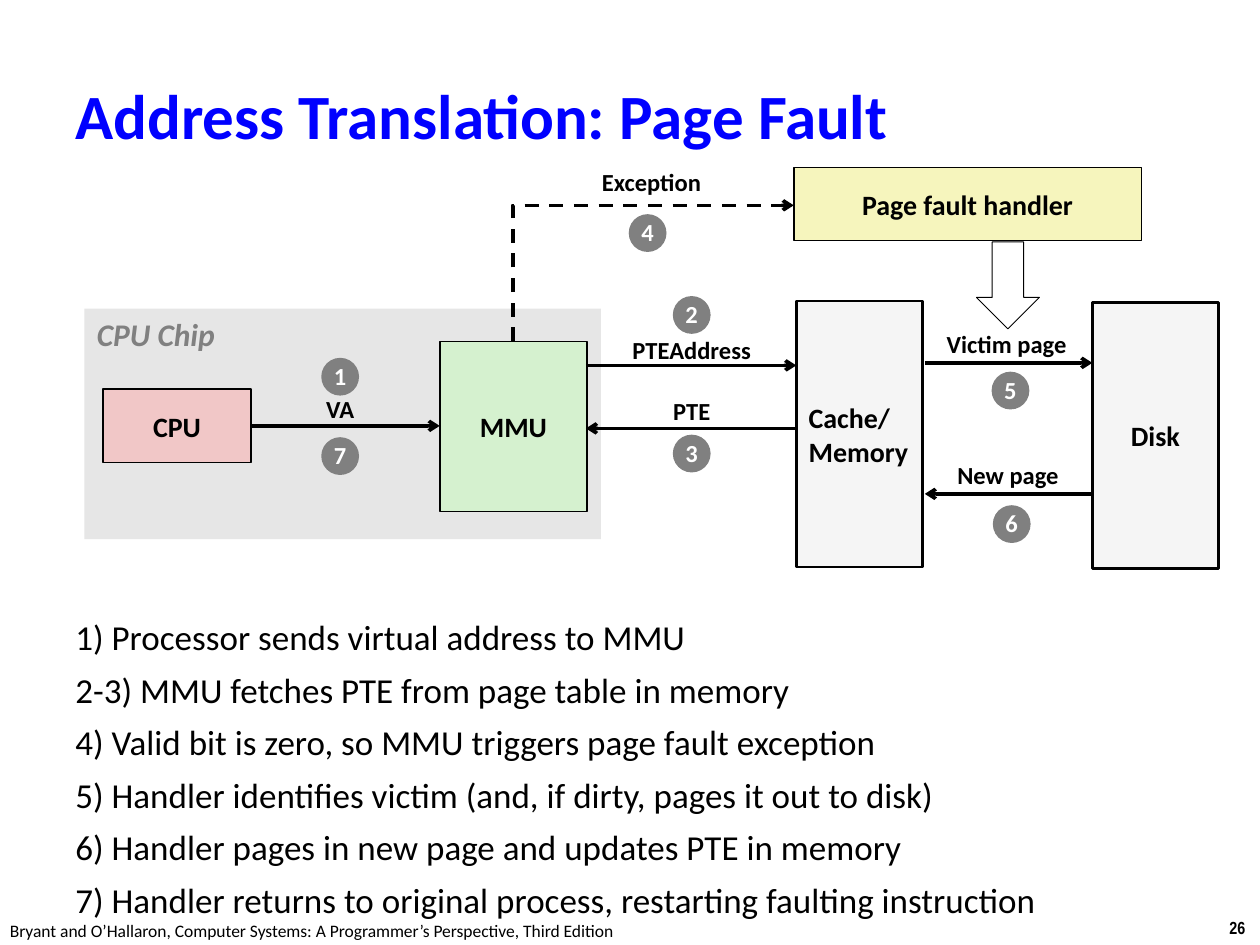
from dataclasses import dataclass

from lxml import etree
from pptx import Presentation
from pptx.dml.color import RGBColor
from pptx.enum import dml, shapes, text
from pptx.oxml import ns
from pptx.util import Inches, Pt


@dataclass(frozen=True)
class Theme:
    font: str = "Calibri"
    number_font: str = "Arial Narrow"
    ink: str = "000000"
    paper: str = "FFFFFF"
    title: str = "0000FF"
    gray: str = "808080"
    chip: str = "E6E6E6"
    cpu: str = "F1C7C7"
    mmu: str = "D5F1CF"
    storage: str = "F5F5F5"
    handler: str = "F6F5BD"
    title_size: int = 36
    step_size: int = 20
    chip_size: int = 18
    node_size: int = 16
    label_size: int = 14
    footer_size: int = 10


THEME = Theme()
SHAPE = shapes.MSO_SHAPE
CENTER = text.PP_ALIGN.CENTER
MIDDLE = text.MSO_ANCHOR.MIDDLE


@dataclass(frozen=True)
class Box:
    left: float
    top: float
    width: float
    height: float

    def inner(self, x, y, width, height):
        return Box(self.left + x, self.top + y, width, height)

    def point(self, x, y):
        return Inches(self.left + x), Inches(self.top + y)

    def lengths(self):
        return [Inches(v) for v in (self.left, self.top, self.width, self.height)]


def write(frame, lines, size, color=THEME.ink, bold=False, italic=False,
          font=THEME.font, align=text.PP_ALIGN.LEFT, anchor=text.MSO_ANCHOR.TOP,
          wrap=False, spacing=None, before=0):
    frame.word_wrap = wrap
    frame.vertical_anchor = anchor
    for index, line in enumerate(lines):
        paragraph = frame.add_paragraph() if index else frame.paragraphs[0]
        paragraph.alignment = align
        paragraph.space_before = Pt(before)
        paragraph.line_spacing = spacing
        run = paragraph.add_run()
        run.text = line
        run.font.name = font
        run.font.size = Pt(size)
        run.font.bold = bold
        run.font.italic = italic
        run.font.color.rgb = RGBColor.from_string(color)


def add_text(slide, box, lines, size, **style):
    frame = slide.shapes.add_textbox(*box.lengths()).text_frame
    write(frame, lines, size, **style)


def add_block(slide, box, kind=SHAPE.RECTANGLE, fill=None, line_width=None):
    block = slide.shapes.add_shape(kind, *box.lengths())
    block.shadow.inherit = False
    if fill:
        block.fill.solid()
        block.fill.fore_color.rgb = RGBColor.from_string(fill)
    else:
        block.fill.background()
    if line_width:
        block.line.color.rgb = RGBColor.from_string(THEME.ink)
        block.line.width = Pt(line_width)
    else:
        block.line.fill.background()
    return block


def add_node(slide, box, lines, fill, line_width=1, align=CENTER):
    block = add_block(slide, box, fill=fill, line_width=line_width)
    write(block.text_frame, lines, THEME.node_size, bold=True, align=align, anchor=MIDDLE)


def add_label(slide, diagram, x, y, width, label):
    add_text(slide, diagram.inner(x - width / 2, y, width, 0.33), [label],
             THEME.label_size, bold=True, align=CENTER, anchor=MIDDLE, spacing=0.98)


def add_badge(slide, diagram, x, y, number):
    size = 0.3
    badge = add_block(slide, diagram.inner(x - size / 2, y - size / 2, size, size),
                      SHAPE.OVAL, THEME.gray)
    write(badge.text_frame, [number], THEME.label_size, color=THEME.paper, bold=True,
          align=CENTER, anchor=MIDDLE, spacing=0.98)


def add_arrow(slide, start, end, kind=shapes.MSO_CONNECTOR.STRAIGHT):
    arrow = slide.shapes.add_connector(kind, *start, *end)
    arrow.line.color.rgb = RGBColor.from_string(THEME.ink)
    arrow.line.width = Pt(2)
    etree.SubElement(arrow.line._get_or_add_ln(), ns.qn("a:tailEnd"), type="arrow")
    etree.SubElement(arrow._element.spPr, ns.qn("a:effectLst"))
    return arrow


def add_exception_path(slide, diagram, start, end):
    run, rise = end[0] - start[0], start[1] - end[1]
    x, y = (start[0] + end[0]) / 2, (start[1] + end[1]) / 2
    path = add_arrow(slide, diagram.point(x + rise / 2, y + run / 2),
                     diagram.point(x - rise / 2, y - run / 2),
                     shapes.MSO_CONNECTOR.ELBOW)
    path.line.dash_style = dml.MSO_LINE.DASH
    properties = path._element.spPr
    properties.find(ns.qn("a:xfrm")).set("rot", "5400000")
    properties.find(ns.qn("a:prstGeom")).set("prst", "bentConnector2")


def add_title(slide, box):
    add_text(slide, box, ["Address Translation: Page Fault"], THEME.title_size,
             color=THEME.title, bold=True, anchor=MIDDLE, wrap=True)


def add_diagram(slide, box):
    add_block(slide, box.inner(0, 1.16, 4.1, 1.83), fill=THEME.chip)
    add_text(slide, box.inner(0, 1.16, 1.16, 0.4), ["CPU Chip"], THEME.chip_size,
             color=THEME.gray, bold=True, italic=True)

    add_node(slide, box.inner(0.15, 1.8, 1.17, 0.58), ["CPU"], THEME.cpu)
    add_node(slide, box.inner(2.82, 1.42, 1.17, 1.35), ["MMU"], THEME.mmu)
    add_node(slide, box.inner(5.65, 1.1, 1, 2.11), ["Cache/", "Memory"],
             THEME.storage, 1.5, text.PP_ALIGN.LEFT)
    add_node(slide, box.inner(8, 1.11, 1, 2.11), ["Disk"], THEME.storage, 1.5)
    add_node(slide, box.inner(5.63, 0.04, 2.76, 0.58), ["Page fault handler"], THEME.handler)
    add_block(slide, box.inner(7.08, 0.63, 0.5, 0.69), SHAPE.DOWN_ARROW, line_width=0.5)

    for start, end, y in [(1.32, 2.82, 2.09), (3.98, 5.65, 1.61), (5.65, 3.98, 2.11),
                          (6.67, 8, 1.59), (8, 6.67, 2.63)]:
        add_arrow(slide, box.point(start, y), box.point(end, y))
    add_exception_path(slide, box, (3.4, 1.42), (5.63, 0.34))

    for x, y, width, label in [(2.03, 1.8, 0.42, "VA"), (4.82, 1.33, 1.15, "PTEAddress"),
                               (4.82, 1.81, 0.5, "PTE"), (7.32, 1.28, 1.16, "Victim page"),
                               (7.33, 2.32, 1.01, "New page"), (4.5, 0, 0.99, "Exception")]:
        add_label(slide, box, x, y, width, label)

    badges = [(2.03, 1.7), (4.82, 1.21), (4.82, 2.31), (4.47, 0.56),
              (7.35, 1.81), (7.36, 2.87), (2.03, 2.33)]
    for number, (x, y) in enumerate(badges, 1):
        add_badge(slide, box, x, y, str(number))


def add_steps(slide, box):
    add_text(slide, box, [
        "1) Processor sends virtual address to MMU",
        "2-3) MMU fetches PTE from page table in memory",
        "4) Valid bit is zero, so MMU triggers page fault exception",
        "5) Handler identifies victim (and, if dirty, pages it out to disk)",
        "6) Handler pages in new page and updates PTE in memory",
        "7) Handler returns to original process, restarting faulting instruction",
    ], THEME.step_size, wrap=True, spacing=0.73, before=12.5)


def add_footer(slide, box):
    add_text(slide, box.inner(0, 0.02, 5.08, 0.27),
             ["Bryant and O’Hallaron, Computer Systems: A Programmer’s Perspective, Third Edition"],
             THEME.footer_size)
    add_text(slide, box.inner(box.width - 0.34, 0, 0.34, 0.27), ["26"],
             THEME.footer_size, bold=True, font=THEME.number_font)


def main():
    deck = Presentation()
    deck.slide_width, deck.slide_height = Inches(10), Inches(7.5)
    slide = deck.slides.add_slide(deck.slide_layouts[6])
    add_title(slide, Box(0.5, 0.48, 9.53, 0.86))
    add_diagram(slide, Box(0.67, 1.29, 9, 3.22))
    add_steps(slide, Box(0.5, 4.92, 8.75, 2.25))
    add_footer(slide, Box(-0.02, 7.23, 10.02, 0.29))
    deck.save("out.pptx")


if __name__ == "__main__":
    main()
